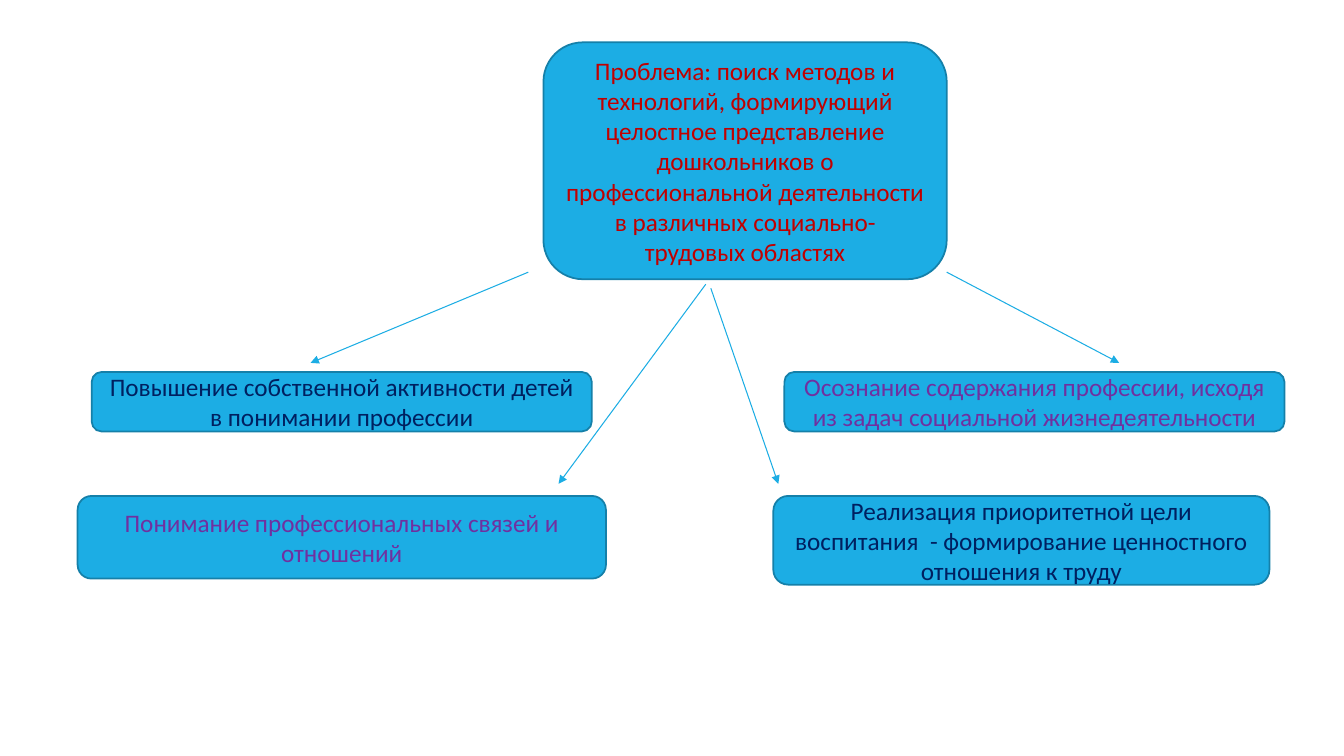
from pptx import Presentation
from pptx.dml.color import RGBColor
from pptx.enum.shapes import MSO_CONNECTOR, MSO_SHAPE
from pptx.enum.text import MSO_ANCHOR, PP_ALIGN
from pptx.oxml.ns import qn
from pptx.util import Inches, Pt
from lxml import etree

ROUNDED = MSO_SHAPE.ROUNDED_RECTANGLE
STRAIGHT = MSO_CONNECTOR.STRAIGHT
MIDDLE = MSO_ANCHOR.MIDDLE
CENTER = PP_ALIGN.CENTER
BLANK_LAYOUT = 6

BLUE = "1CADE4"
BORDER = "1580A9"
RED = "C00000"
PURPLE = "7030A0"
NAVY = "002060"

UPPER_ROW = 3.69
LOWER_ROW = 4.92

BOXES = [
    ("Проблема: поиск методов и технологий, формирующий целостное представление "
     "дошкольников о профессиональной деятельности в различных "
     "социально-трудовых областях", RED, (5.39, 0.42, 4, 2.35)),
    ("Осознание содержания профессии, исходя из задач социальной "
     "жизнедеятельности", PURPLE, (7.78, UPPER_ROW, 4.96, 0.59)),
    ("Повышение собственной активности детей в понимании профессии",
     NAVY, (0.91, UPPER_ROW, 4.96, 0.59)),
    ("Понимание профессиональных связей и отношений",
     PURPLE, (0.77, LOWER_ROW, 5.24, 0.82)),
    ("Реализация приоритетной цели воспитания  - формирование ценностного "
     "отношения к труду", NAVY, (7.67, LOWER_ROW, 4.92, 0.88)),
]

ARROWS = [
    ((5.24, 2.7), (3.08, 3.6)),
    ((9.39, 2.7), (11.1, 3.6)),
    ((7, 2.82), (5.54, 4.8)),
    ((7.05, 2.86), (7.72, 4.8)),
]


def color(value):
    return RGBColor.from_string(value)


def write_text(frame, text, *, size=18, font="Calibri", fill=NAVY, align=CENTER):
    frame.word_wrap = True
    frame.vertical_anchor = MIDDLE
    para = frame.paragraphs[0]
    para.alignment = align
    span = para.add_run()
    span.text = text
    span.font.size = Pt(size)
    span.font.name = font
    span.font.color.rgb = color(fill)


def add_box(page, text, text_color, bounds):
    box = page.shapes.add_shape(ROUNDED, *map(Inches, bounds))
    box.shadow.inherit = False
    box.fill.solid()
    box.fill.fore_color.rgb = color(BLUE)
    box.line.color.rgb = color(BORDER)
    box.line.width = Pt(1.25)
    write_text(box.text_frame, text, fill=text_color)


def add_arrow(page, start, end):
    arrow = page.shapes.add_connector(STRAIGHT, *map(Inches, start + end))
    arrow.line.color.rgb = color(BLUE)
    arrow.line.width = Pt(0.75)
    etree.SubElement(arrow.line._get_or_add_ln(), qn("a:tailEnd"), type="triangle")
    etree.SubElement(arrow._element.spPr, qn("a:effectLst"))


def main():
    deck = Presentation()
    deck.slide_width = Inches(13.33)
    deck.slide_height = Inches(7.5)
    page = deck.slides.add_slide(deck.slide_layouts[BLANK_LAYOUT])
    for text, text_color, bounds in BOXES:
        add_box(page, text, text_color, bounds)
    for start, end in ARROWS:
        add_arrow(page, start, end)
    deck.save("out.pptx")


if __name__ == "__main__":
    main()
